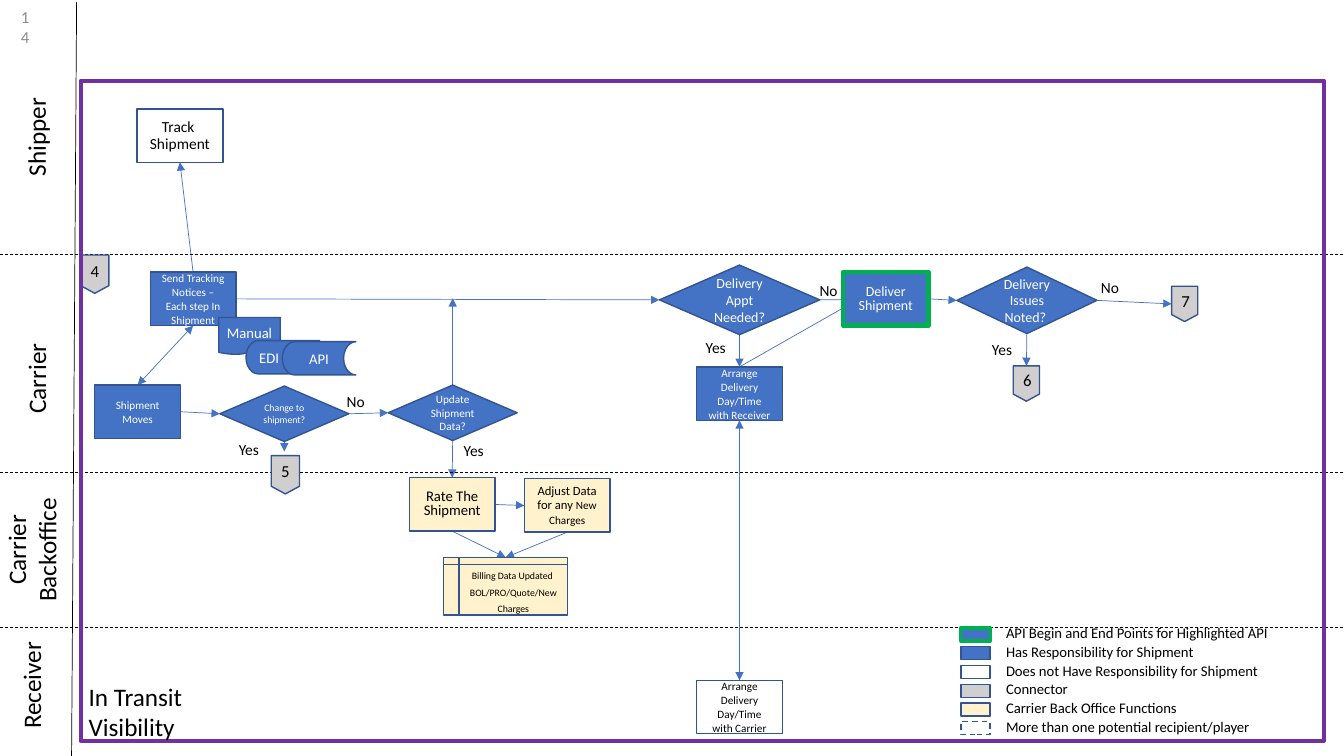
from lxml import etree
from pptx import Presentation
from pptx.dml.color import RGBColor
from pptx.enum.dml import MSO_LINE
from pptx.enum.shapes import MSO_CONNECTOR, MSO_SHAPE
from pptx.enum.text import MSO_ANCHOR, PP_ALIGN
from pptx.oxml.ns import qn
from pptx.util import Inches, Pt

STRAIGHT = MSO_CONNECTOR.STRAIGHT
DASH = MSO_LINE.DASH
MIDDLE = MSO_ANCHOR.MIDDLE
LEFT, CENTER, RIGHT = PP_ALIGN.LEFT, PP_ALIGN.CENTER, PP_ALIGN.RIGHT
RECT = MSO_SHAPE.RECTANGLE
BOX = MSO_SHAPE.FLOWCHART_PROCESS
CHOICE = MSO_SHAPE.FLOWCHART_DECISION
JUMP = MSO_SHAPE.FLOWCHART_OFFPAGE_CONNECTOR
PAPER = MSO_SHAPE.FLOWCHART_DOCUMENT
STORE = MSO_SHAPE.FLOWCHART_STORED_DATA
TABLE = MSO_SHAPE.FLOWCHART_INTERNAL_STORAGE
BLUE, NAVY, GREEN, PURPLE = "4472C4", "325491", "00B050", "7030A0"
GRAY, CREAM, WHITE, BLACK = "D0CECE", "FFF2CC", "FFFFFF", "000000"
TOP, WEST, BOTTOM, EAST = range(4)

deck = Presentation()
deck.slide_width, deck.slide_height = Inches(13.33), Inches(7.5)
slide = deck.slides.add_slide(deck.slide_layouts[6])
shapes = slide.shapes


def color(target, tone):
    """Paint a fill, or the colour of a font, from a hex string."""
    if hasattr(target, "solid"):
        target.solid()
        target.fore_color.rgb = RGBColor.from_string(tone)
    else:
        target.color.rgb = RGBColor.from_string(tone)


def write(shape, text, size, tone=BLACK, align=LEFT, pitch=None, wrap=True):
    frame = shape.text_frame
    frame.text = text
    frame.word_wrap = wrap
    for para in frame.paragraphs:
        para.alignment = align
        if pitch:
            para.line_spacing = Pt(pitch)
        for run in para.runs:
            run.font.name, run.font.size = "Calibri", Pt(size)
            color(run.font, tone)


# Flow steps: name, kind, left, top, width, height, fill, size, pitch, text
W, H = 0.85, 0.53
steps = [
    ("four", JUMP, 0.8, 2.53, 0.28, 0.38, GRAY, 12, None, "4"),
    ("send", BOX, 1.49, 2.7, W, H, BLUE, 8, 10,
     "Send Tracking Notices – Each step In Shipment"),
    ("track", BOX, 1.36, 1.08, W, H, None, 11, 12, "Track \nShipment"),
    ("manual", PAPER, 2.17, 3.15, 0.61, 0.37, BLUE, 10.5, None, "Manual"),
    ("edi", STORE, 2.44, 3.38, 0.73, 0.33, BLUE, 10.5, None, "EDI"),
    ("api", STORE, 2.8, 3.39, 0.73, 0.33, BLUE, 10.5, None, "API"),
    ("appt", CHOICE, 6.54, 2.63, 1.59, 0.69, BLUE, 10, None,
     "Delivery Appt Needed?"),
    ("moves", BOX, 0.94, 3.82, W, H, BLUE, 8, 10, "Shipment Moves"),
    ("ask", BOX, 6.91, 3.64, W, H, BLUE, 8, 10,
     "Arrange Delivery Day/Time with Receiver"),
    ("reply", BOX, 6.91, 6.75, W, H, None, 8, 10,
     "Arrange Delivery Day/Time with Carrier"),
    ("deliver", BOX, 8.36, 2.7, W, H, BLUE, 10, 10, "Deliver\nShipment"),
    ("rate", BOX, 4.06, 4.74, W, H, CREAM, 10.5, 10, "Rate The Shipment"),
    ("adjust", BOX, 5.2, 4.75, W, H, CREAM, 9, 10, "Adjust Data for any "),
    ("bill", TABLE, 4.4, 5.53, 1.23, 0.57, CREAM, 7, 12,
     "Billing Data Updated \nBOL/PRO/Quote/New Charges"),
    ("update", CHOICE, 3.85, 3.82, 1.28, 0.55, BLUE, 8, None,
     "Update Shipment Data?"),
    ("change", CHOICE, 2.18, 3.83, 1.28, 0.55, BLUE, 7, None,
     "Change to shipment?"),
    ("five", JUMP, 2.69, 4.52, 0.28, 0.38, GRAY, 12, None, "5"),
    ("issues", CHOICE, 9.49, 2.65, 1.39, 0.66, BLUE, 10, None,
     "Delivery Issues Noted? "),
    ("six", JUMP, 10.05, 3.63, 0.26, 0.35, GRAY, 12, None, "6"),
    ("seven", JUMP, 11.62, 2.84, 0.26, 0.35, GRAY, 12, None, "7"),
]
nodes = {}
for name, kind, x, y, w, h, fill, size, pitch, text in steps:
    node = shapes.add_shape(kind, Inches(x), Inches(y), Inches(w), Inches(h))
    node.shadow.inherit = False
    if fill:
        color(node.fill, fill)
    else:
        node.fill.background()
    edge, width = (GREEN, 3) if name == "deliver" else (NAVY, 1)
    color(node.line.fill, edge)
    node.line.width = Pt(width)
    write(node, text, size, WHITE if fill == BLUE else BLACK,
          LEFT if name == "edi" else CENTER, pitch)
    frame = node.text_frame
    frame.vertical_anchor = MIDDLE
    if kind in (PAPER, STORE):
        frame.margin_left = frame.margin_right = Inches(0.01)
        frame.margin_top = frame.margin_bottom = Inches(0.01)
    nodes[name] = node

# Mixed sizes in the "Adjust Data" step
for text, size in [("New", 8), (" ", 9), ("Charges", 8)]:
    run = nodes["adjust"].text_frame.paragraphs[0].add_run()
    run.text = text
    run.font.name, run.font.size = "Calibri", Pt(size)
    color(run.font, BLACK)

# Lines: an end is a (step, side) pair or a point; then tone, dash, arrowheads
lines = [
    ((0, 2.52), (13.33, 2.52), BLACK, True, ()),
    ((0, 4.69), (13.33, 4.69), BLACK, True, ()),
    ((0, 6.22), (13.33, 6.22), BLACK, True, ()),
    ((0.76, 0.02), (0.71, 7.5), BLACK, False, ()),
]
arrows = [
    (("send", TOP), ("track", BOTTOM)),
    (("send", EAST), ("appt", WEST)),
    (("appt", EAST), ("deliver", EAST)),
    (("appt", BOTTOM), ("ask", TOP)),
    (("ask", TOP), (8.53, 2.96)),
    (("deliver", EAST), ("issues", WEST)),
    (("rate", EAST), ("adjust", WEST)),
    (("rate", BOTTOM), ("bill", TOP)),
    (("adjust", BOTTOM), ("bill", TOP)),
    (("moves", EAST), ("change", WEST)),
    (("update", BOTTOM), ("rate", TOP)),
    (("change", EAST), ("update", WEST)),
    (("change", BOTTOM), (2.82, 4.48)),
    (("issues", EAST), ("seven", WEST)),
    (("issues", BOTTOM), ("six", TOP)),
    (("update", TOP), (4.49, 2.96)),
]
lines += [(a, b, BLUE, False, ("tailEnd",)) for a, b in arrows]
both = ("headEnd", "tailEnd")
lines += [(("send", BOTTOM), ("moves", TOP), BLUE, False, both),
          (("ask", BOTTOM), ("reply", TOP), BLUE, False, both)]
for start, end, tone, dashed, heads in lines:
    spots = [Inches(v) for p in (start, end)
             for v in ((0, 0) if p[0] in nodes else p)]
    link = shapes.add_connector(STRAIGHT, *spots)
    if start[0] in nodes:
        link.begin_connect(nodes[start[0]], start[1])
    if end[0] in nodes:
        link.end_connect(nodes[end[0]], end[1])
    color(link.line.fill, tone)
    link.line.width = Pt(0.5)
    if dashed:
        link.line.dash_style = DASH
    props = link._element.spPr
    for head in heads:
        etree.SubElement(props.find(qn("a:ln")), qn("a:" + head), type="triangle")
    etree.SubElement(props, qn("a:effectLst"))
    # Lines lie behind the steps
    shapes._spTree.insert(2, link._element)

# Frame around the phase
frame = shapes.add_shape(RECT, Inches(0.8), Inches(0.8), Inches(12.33), Inches(6.55))
frame.shadow.inherit = False
frame.fill.background()
color(frame.line.fill, PURPLE)
frame.line.width = Pt(3)

# Labels: text, left, top, width, height, size, turn, wrap
labels = [
    ("Shipper", -0.14, 1.15, 0.99, 0.4, 18, 270, False),
    ("Carrier", -0.14, 3.5, 1, 0.4, 18, 270, True),
    ("Carrier Backoffice", -0.35, 5.1, 1.33, 0.71, 18, 270, True),
    ("Receiver", -0.25, 6.57, 1.12, 0.4, 18, 270, True),
    ("In Transit Visibility", 0.78, 6.71, 1.35, 0.71, 18, 0, True),
    ("14", 0.11, 0.1, 0.27, 0.34, 12, 0, True),
]
labels += [("Yes", x, y, 0.41, 0.29, 11, 0, False)
           for x, y in [(6.9, 3.31), (2.27, 4.32), (4.5, 4.33), (9.74, 3.32)]]
labels += [("No", x, y, 0.38, 0.29, 11, 0, False)
           for x, y in [(8.03, 2.74), (3.34, 3.84), (10.82, 2.71)]]

# Legend: a swatch and a label in each row
legend = [
    ("API Begin and End Points for Highlighted API", BLUE, GREEN, 2.25),
    ("Has Responsibility for Shipment", BLUE, NAVY, 1),
    ("Does not Have Responsibility for Shipment", WHITE, NAVY, 1),
    ("Connector", GRAY, NAVY, 1),
    ("Carrier Back Office Functions", CREAM, NAVY, 1),
    ("More than one potential recipient/player", None, NAVY, 1),
]
for row, (text, fill, edge, width) in enumerate(legend):
    y = 6.14 + 0.186 * row
    swatch = shapes.add_shape(RECT, Inches(9.53), Inches(y + 0.09), Inches(0.29), Inches(0.13))
    swatch.shadow.inherit = False
    color(swatch.line.fill, edge)
    swatch.line.width = Pt(width)
    if fill:
        color(swatch.fill, fill)
    else:
        swatch.fill.background()
        swatch.line.dash_style = DASH
    labels.append((text, 9.88, y, 3, 0.28, 10.5, 0, True))

for text, x, y, w, h, size, turn, wrap in labels:
    label = shapes.add_textbox(Inches(x), Inches(y), Inches(w), Inches(h))
    label.rotation = turn
    page = text == "14"
    align = RIGHT if page else CENTER if text == "Carrier Backoffice" else LEFT
    write(label, text, size, "8C8C8C" if page else BLACK, align, wrap=wrap)
    if page:
        label.text_frame.vertical_anchor = MIDDLE

deck.save("out.pptx")
